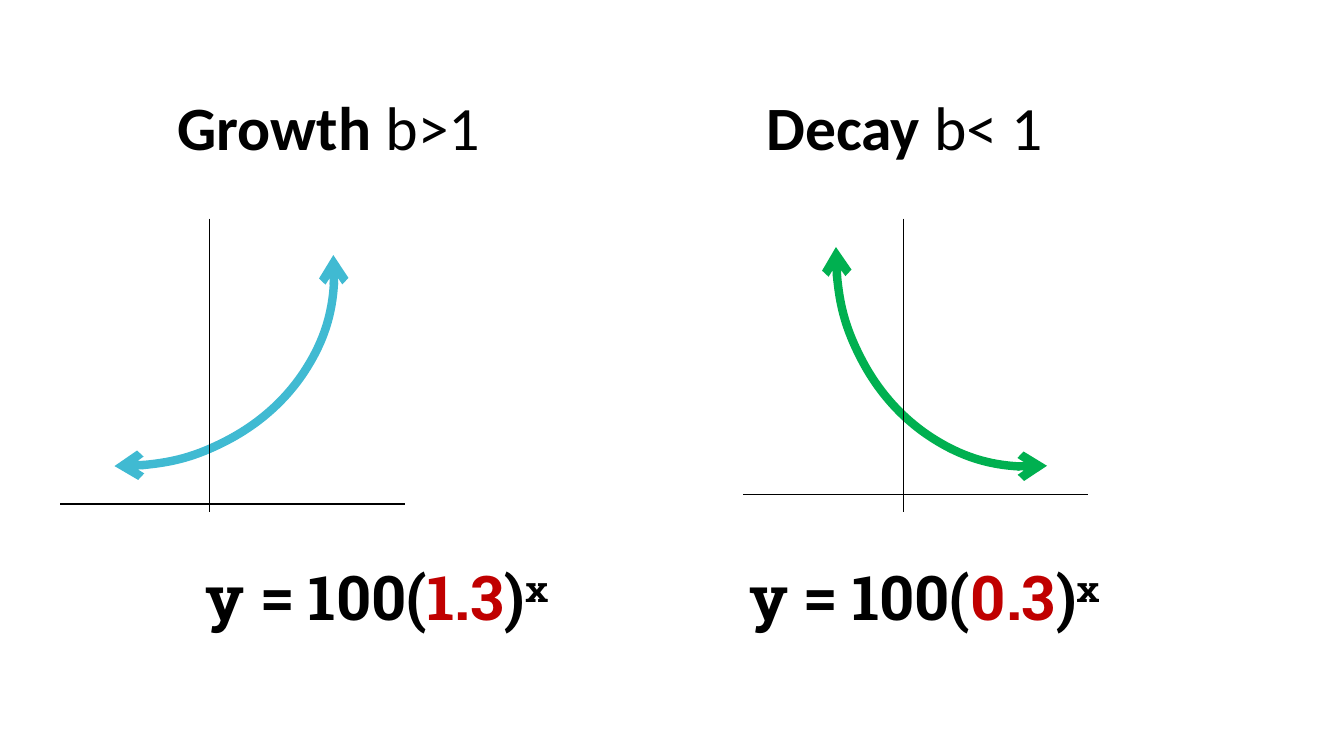
import pptx
import pptx.util
import pptx.dml.color
import pptx.enum.shapes
import pptx.enum.text
import pptx.oxml.ns
from lxml import etree

Inches = pptx.util.Inches
Pt = pptx.util.Pt

COLORS = {"ink": "000000", "base": "C00000", "growth": "40BAD2", "decay": "00B050"}


def color(name):
    return pptx.dml.color.RGBColor.from_string(COLORS[name])


def add_xml(parent, tag, **attributes):
    return etree.SubElement(parent, pptx.oxml.ns.qn(tag), attributes)


def place(shape, box):
    shape.left, shape.top, shape.width, shape.height = [Inches(side) for side in box]


def write_spans(shape, spans, font_name, wrap=True):
    """Fill one paragraph with (text, bold, color name) spans."""
    frame = shape.text_frame
    frame.word_wrap = wrap
    frame.auto_size = pptx.enum.text.MSO_AUTO_SIZE.SHAPE_TO_FIT_TEXT
    frame.vertical_anchor = pptx.enum.text.MSO_ANCHOR.TOP
    para = frame.paragraphs[0]
    para.space_before = Pt(0)
    for text, bold, color_name in spans:
        span = para.add_run()
        span.text = text
        span.font.name = font_name
        span.font.size = Pt(44)
        span.font.bold = bold
        span.font.color.rgb = color(color_name)
    return para


def add_heading(placeholder, box, name, condition, wrap):
    place(placeholder, box)
    spans = [(name, True, "ink"), (condition, False, "ink")]
    write_spans(placeholder, spans, "Calibri", wrap)


def add_equation(page, box, base):
    equation = page.shapes.add_textbox(*[Inches(side) for side in box])
    spans = [("y = 100(", True, "ink"), (base, True, "base"),
             (")", True, "ink"), ("x", True, "ink")]
    para = write_spans(equation, spans, "Roboto Slab")
    para.alignment = pptx.enum.text.PP_ALIGN.CENTER
    exponent = para.runs[-1]
    exponent.font._element.set("baseline", "30000")


def add_curve(page, box, rotation, color_name):
    curve = page.shapes.add_shape(
        pptx.enum.shapes.MSO_SHAPE.ARC, *[Inches(side) for side in box])
    curve.adjustments[0] = 159.09
    curve.adjustments[1] = 1.07
    curve.rotation = rotation
    curve.shadow.inherit = False
    curve.fill.background()
    curve.line.color.rgb = color(color_name)
    curve.line.width = Pt(6)
    for end in ("a:headEnd", "a:tailEnd"):
        add_xml(curve.line._get_or_add_ln(), end, type="arrow")


def add_axes(page, box, origin):
    """Cross two axes at the origin, given as an offset inside the box."""
    left, top, width, height = box
    across, down = left + origin[0], top + origin[1]
    for ends in ((across, top, across, top + height),
                 (left, down, left + width, down)):
        axis = page.shapes.add_connector(
            pptx.enum.shapes.MSO_CONNECTOR.STRAIGHT, *[Inches(end) for end in ends])
        axis.line.color.rgb = color("ink")
        axis.line.width = Pt(0.75)
        add_xml(axis._element.spPr, "a:effectLst")


def add_graph(page, curve_box, rotation, color_name, axes_box, origin):
    add_curve(page, curve_box, rotation, color_name)
    add_axes(page, axes_box, origin)


def build_comparison(deck):
    page = deck.slides.add_slide(deck.slide_layouts.get_by_name("Comparison"))
    holders = {holder.placeholder_format.idx: holder for holder in page.placeholders}

    # Headings, in the two text placeholders of the layout
    add_heading(holders[1], (1.66, 0.83, 3.26, 0.84), "Growth", " b>1", False)
    add_heading(holders[3], (7.5, 0.83, 3.75, 0.84), "Decay", " b< 1", True)
    for holder in holders.values():
        if not holder.text_frame.text:
            holder.element.getparent().remove(holder.element)

    # Equations
    add_equation(page, (1.49, 5.5, 4.5, 0.84), "1.3")
    add_equation(page, (6.67, 5.5, 5, 0.84), "0.3")

    # Graphs
    add_graph(page, (-0.72, 0.59, 3.83, 4.24), 90, "growth",
              (0.6, 2.17, 3.42, 2.91), (1.48, 2.83))
    add_graph(page, (8.29, 0.39, 3.83, 4.24), 180, "decay",
              (7.37, 2.17, 3.42, 2.91), (1.59, 2.74))


def main():
    deck = pptx.Presentation()
    deck.slide_width = Inches(13.33)
    deck.slide_height = Inches(7.5)
    build_comparison(deck)
    deck.save("out.pptx")


if __name__ == "__main__":
    main()
